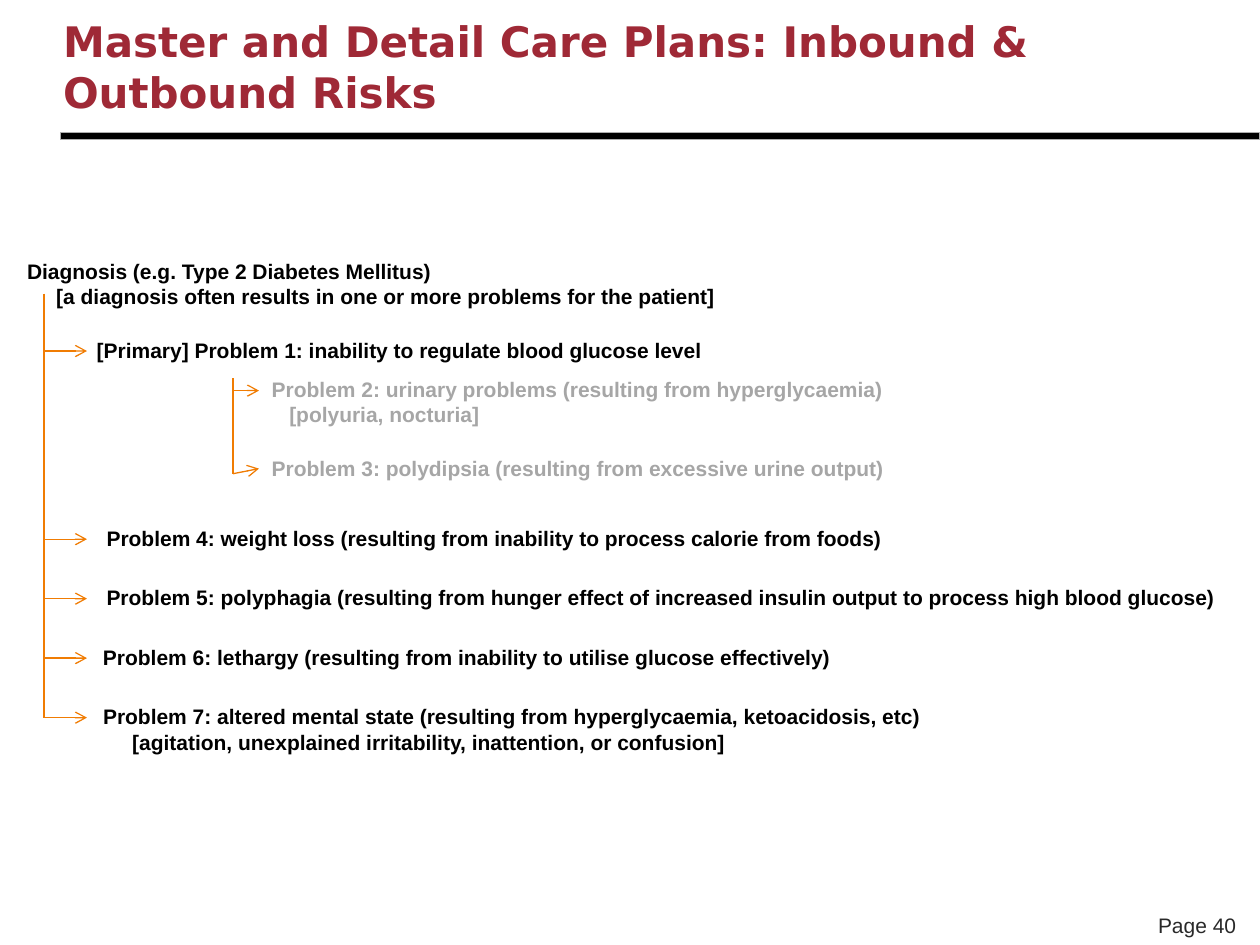
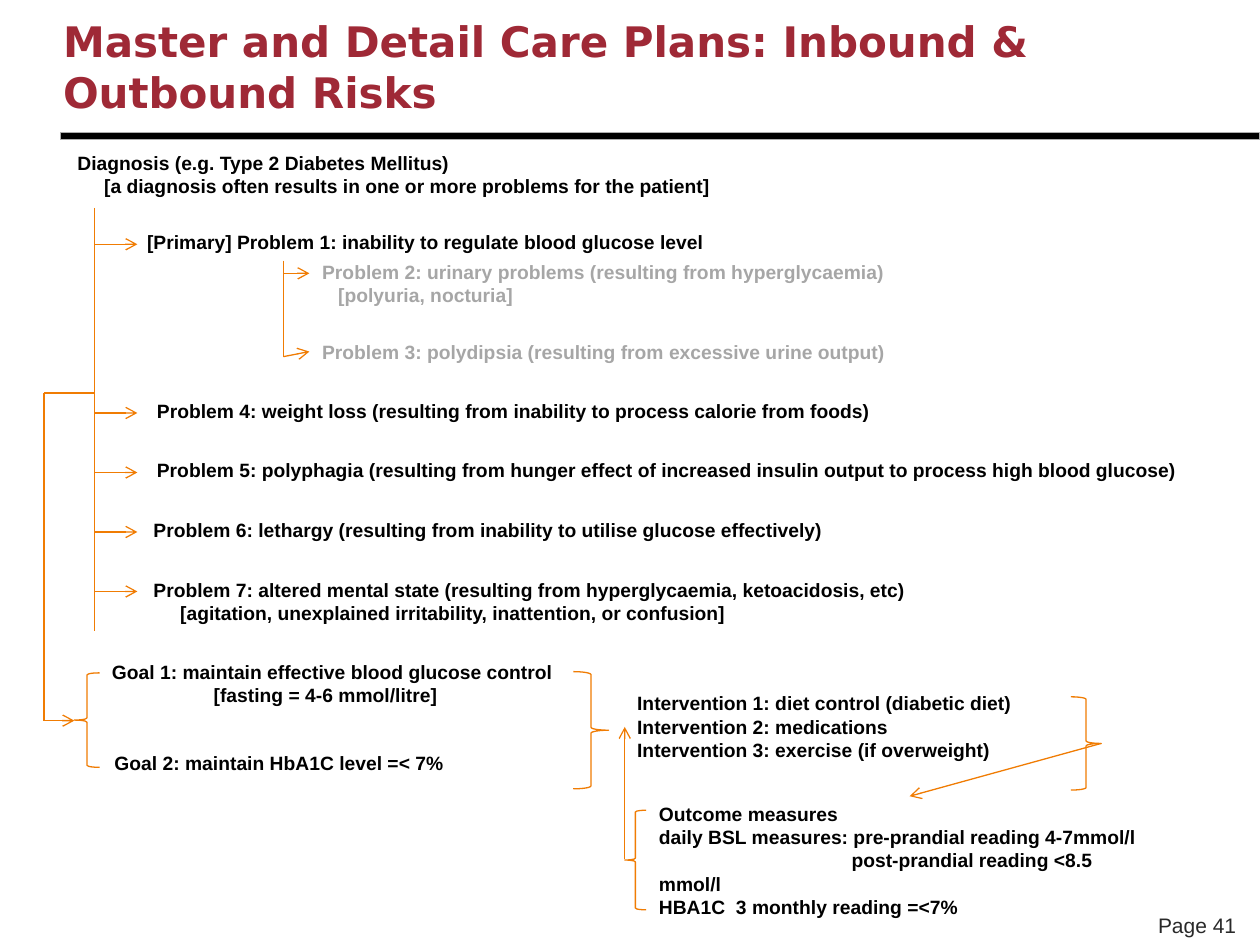
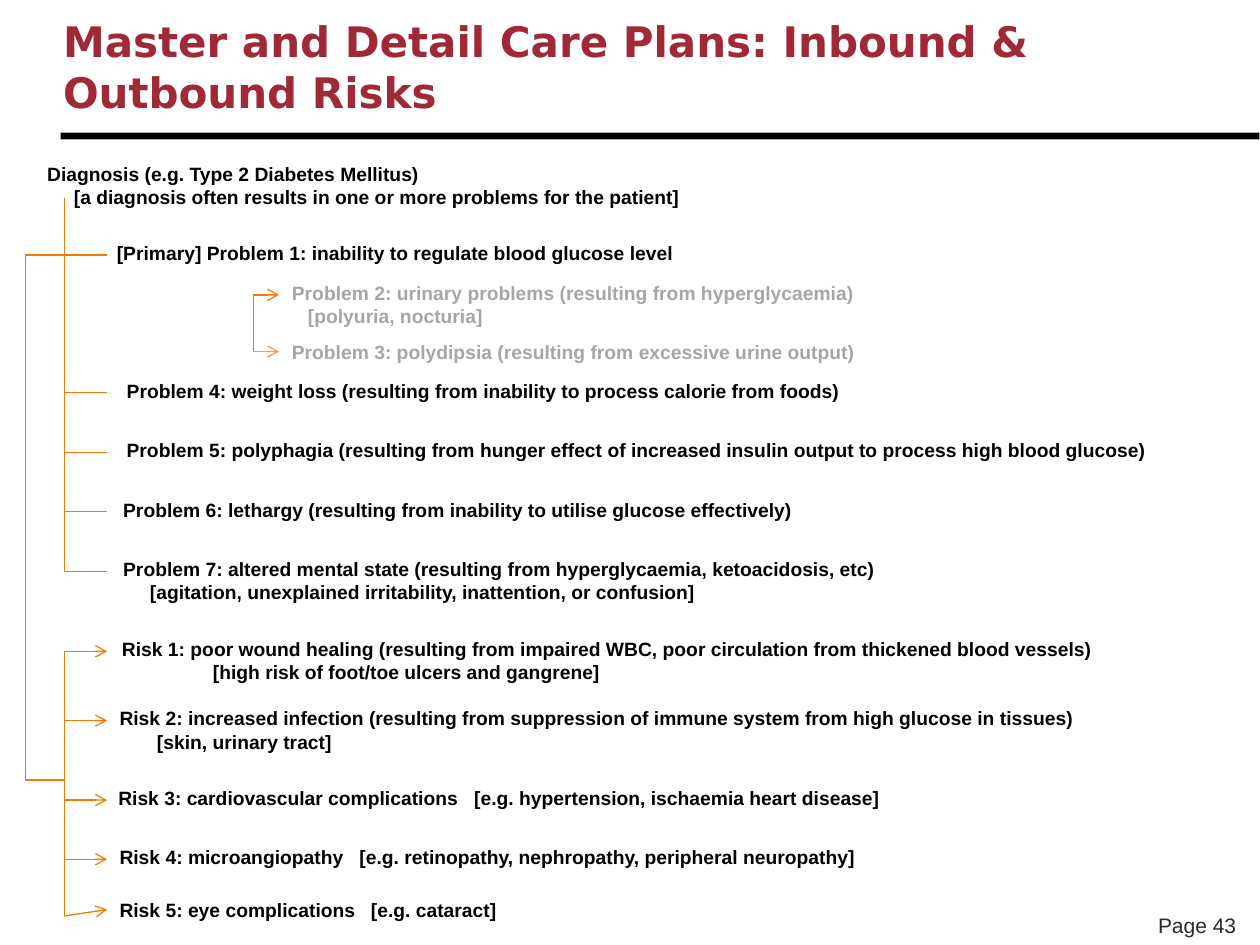
from lxml.etree import SubElement
from pptx import Presentation
from pptx.dml.color import RGBColor
from pptx.enum.shapes import MSO_CONNECTOR, MSO_SHAPE
from pptx.enum.text import MSO_ANCHOR, MSO_AUTO_SIZE, PP_ALIGN
from pptx.oxml.ns import qn
from pptx.util import Pt

COLORS = {
    "title": "9F2936", "text": "000000", "muted": "A6A6A6", "page": "292929",
    "line": "F07C03", "light_line": "F89F42", "band": "000000", "band_edge": "ADADAD",
}
TITLE = "Master and Detail Care Plans: Inbound & Outbound Risks"
SPACE_WIDTH = 0.278  # width of an Arial space, in ems

# Text lines are (text, first-line indent in spaces)
# Problem rows: left offset from the trunk, text width at 12 pt, lines
DIAGNOSIS = (-16.8, 400, [
    ("Diagnosis (e.g. Type 2 Diabetes Mellitus)", 0),
    ("[a diagnosis often results in one or more problems for the patient]", 5)])
MAIN_PROBLEMS = [
    (23, 352, [("[Primary] Problem 1: inability to regulate blood glucose level", 0)]),
    (28.6, 454, [("Problem 4: weight loss (resulting from inability to process calorie from foods)", 0)]),
    (28.6, 647, [("Problem 5: polyphagia (resulting from hunger effect of increased insulin output "
                  "to process high blood glucose)", 0)]),
    (26.6, 426, [("Problem 6: lethargy (resulting from inability to utilise glucose effectively)", 0)]),
    (26.6, 474, [
        ("Problem 7: altered mental state (resulting from hyperglycaemia, ketoacidosis, etc)", 0),
        ("[agitation, unexplained irritability, inattention, or confusion]", 5)]),
]
SUB_PROBLEMS = [
    (123, 355, [("Problem 2: urinary problems (resulting from hyperglycaemia)", 0),
                ("[polyuria, nocturia]", 3)]),
    (123, 359, [("Problem 3: polydipsia (resulting from excessive urine output)", 0)]),
]
ROW_STEP = 34
ARROW_DROP = 11.4   # from the top of a row to its arrow
BRANCH = 24.5       # length of a branch from the trunk
SUB_TRUNK = 108     # offset of the inner trunk from the main trunk
SUB_BRANCH = 14.8

# Tops of rows; sub_trunk is top and bottom, sub_arrows are (start, end) heights
PAGES = [
    dict(page=40, size=12, trunk=25.2, trunk_top=167.8, trunk_bottom=410.4, arrows=True,
         diagnosis=144, primary=189.2, fourth=296.7, subs=(211.7, 257),
         sub_trunk=(216, 270.7), sub_arrows=[(223.2, 223.2), (270.7, 267.8)], last_line="line"),
    dict(page=41, size=11, trunk=54, trunk_top=118.8, trunk_bottom=360.7, arrows=True,
         diagnosis=82.8, primary=128.2, fourth=224.6, subs=(145.4, 190.8),
         sub_trunk=(149, 203.8), sub_arrows=[(156.2, 156.2), (203.8, 200.9)], last_line="line"),
    dict(page=43, size=11, trunk=36.7, trunk_top=113, trunk_bottom=326.9, arrows=False,
         diagnosis=89.3, primary=134.4, fourth=213.1, subs=(157, 190.8),
         sub_trunk=(168.5, 200.9), sub_arrows=[(168.5, 168.5), (200.9, 200.9)],
         last_line="light_line"),
]


def add_label(slide, left, top, width, lines, size, color="text", tab=None):
    height = 7.2 + 1.2 * size * len(lines)
    box = slide.shapes.add_textbox(Pt(left), Pt(top), Pt(width), Pt(height))
    frame = box.text_frame
    frame.word_wrap = True
    for index, (text, spaces) in enumerate(lines):
        paragraph = frame.paragraphs[0] if index == 0 else frame.add_paragraph()
        paragraph.text = text
        paragraph.font.name = "Arial"
        paragraph.font.size = Pt(size)
        paragraph.font.bold = True
        paragraph.font.color.rgb = RGBColor.from_string(COLORS[color])
        properties = paragraph._p.get_or_add_pPr()
        if spaces:
            properties.set("marL", "0")
            properties.set("indent", str(Pt(spaces * SPACE_WIDTH * size)))
        if tab:
            tab_list = properties.makeelement(qn("a:tabLst"))
            SubElement(tab_list, qn("a:tab"), pos=str(Pt(tab)), algn="l")
            properties.insert(0, tab_list)


def add_line(slide, x1, y1, x2, y2, arrow=False, color="line"):
    connector = slide.shapes.add_connector(
        MSO_CONNECTOR.STRAIGHT, Pt(x1), Pt(y1), Pt(x2), Pt(y2))
    connector.line.color.rgb = RGBColor.from_string(COLORS[color])
    connector.line.width = Pt(0.75)
    properties = connector._element.spPr
    if arrow:
        SubElement(properties.find(qn("a:ln")), qn("a:tailEnd"), type="arrow")
    SubElement(properties, qn("a:effectLst"))


presentation = Presentation()
presentation.slide_width = Pt(720)
presentation.slide_height = Pt(540)
layout = presentation.slide_layouts[5]
slides = []

for page in PAGES:
    slide = presentation.slides.add_slide(layout)
    slides.append(slide)
    trunk, size = page["trunk"], page["size"]

    # Title
    title = slide.shapes.title
    title.left, title.top, title.width, title.height = Pt(36), Pt(9.4), Pt(658), Pt(56.9)
    frame = title.text_frame
    frame.margin_left = frame.margin_right = frame.margin_top = frame.margin_bottom = 0
    frame.vertical_anchor = MSO_ANCHOR.MIDDLE
    frame.auto_size = MSO_AUTO_SIZE.NONE
    frame.word_wrap = True
    paragraph = frame.paragraphs[0]
    paragraph.text = TITLE
    paragraph.alignment = PP_ALIGN.LEFT
    paragraph.font.name = "DejaVu Sans"
    paragraph.font.size = Pt(24)
    paragraph.font.bold = True
    paragraph.font.color.rgb = RGBColor.from_string(COLORS["title"])

    # Band under the title
    band = slide.shapes.add_shape(MSO_SHAPE.RECTANGLE, Pt(34.6), Pt(75.6), Pt(685.4), Pt(4.2))
    band.shadow.inherit = False
    band.fill.solid()
    band.fill.fore_color.rgb = RGBColor.from_string(COLORS["band"])
    band.line.color.rgb = RGBColor.from_string(COLORS["band_edge"])
    band.line.width = Pt(0.75)

    # Page number
    footer = slide.shapes.add_textbox(Pt(635), Pt(517.7), Pt(78.5), Pt(21.6))
    footer.text_frame.word_wrap = True
    footer.text_frame.vertical_anchor = MSO_ANCHOR.BOTTOM
    paragraph = footer.text_frame.paragraphs[0]
    paragraph.text = f"Page {page['page']}"
    paragraph.alignment = PP_ALIGN.RIGHT
    paragraph.font.name = "Arial"
    paragraph.font.size = Pt(12)
    paragraph.font.color.rgb = RGBColor.from_string(COLORS["page"])

    # Diagnosis and problems
    main_tops = [page["primary"]] + [page["fourth"] + ROW_STEP * i for i in range(4)]
    rows = [(DIAGNOSIS, page["diagnosis"], "text")]
    rows += [(problem, top, "text") for problem, top in zip(MAIN_PROBLEMS, main_tops)]
    rows += [(problem, top, "muted") for problem, top in zip(SUB_PROBLEMS, page["subs"])]
    for (offset, width, lines), top, color in rows:
        add_label(slide, trunk + offset, top, width * size / 12 + 15, lines, size, color)

    # Main trunk with its branches
    add_line(slide, trunk, page["trunk_top"], trunk, page["trunk_bottom"])
    for top in main_tops:
        y = top + ARROW_DROP
        add_line(slide, trunk, y, trunk + BRANCH, y, page["arrows"])

    # Inner trunk with its branches
    sub_x = trunk + SUB_TRUNK
    sub_top, sub_bottom = page["sub_trunk"]
    add_line(slide, sub_x, sub_top, sub_x, sub_bottom)
    for (start, end), color in zip(page["sub_arrows"], ("line", page["last_line"])):
        add_line(slide, sub_x, start, sub_x + SUB_BRANCH, end, True, color)

# Goals, interventions and outcomes
goal_slide, risk_slide = slides[1:]
for left, top, width, lines in [
    (56.9, 373.7, 273, [("Goal 1: maintain effective blood glucose control", 0),
                        ("[fasting = 4-6 mmol/litre]", 19)]),
    (58.3, 425.5, 206, [("Goal 2: maintain HbA1C level =< 7%", 0)]),
    (357, 391.7, 231, [("Intervention 1: diet control (diabetic diet)", 0),
                       ("Intervention 2: medications", 0),
                       ("Intervention 3: exercise (if overweight)", 0)]),
    (369.4, 455, 292, [("Outcome measures", 0),
                       ("daily BSL measures: pre-prandial reading 4-7mmol/l", 0),
                       ("post-prandial reading <8.5 mmol/l", 36),
                       ("HBA1C  3 monthly reading =<7%", 0)]),
]:
    add_label(goal_slide, left, top, width, lines, 11)

for kind, left, top, width, height in [
    (MSO_SHAPE.LEFT_BRACE, 42.5, 384.5, 14.4, 54),
    (MSO_SHAPE.RIGHT_BRACE, 327.6, 383.8, 20.2, 67),
    (MSO_SHAPE.LEFT_BRACE, 357, 463, 12.2, 56.9),
    (MSO_SHAPE.RIGHT_BRACE, 612, 398.2, 17.3, 53.3),
]:
    brace = goal_slide.shapes.add_shape(kind, Pt(left), Pt(top), Pt(width), Pt(height))
    brace.shadow.inherit = False
    brace.fill.background()
    brace.line.color.rgb = RGBColor.from_string(COLORS["line"])
    brace.line.width = Pt(0.75)

for x1, y1, x2, y2, arrow in [
    (25.2, 224.6, 25.2, 411.8, False),
    (25.2, 224.6, 54, 224.6, False),
    (25.2, 411.8, 42.5, 411.8, True),
    (357, 491, 357, 415.4, True),
    (629.3, 424.8, 519.8, 455, True),
]:
    add_line(goal_slide, x1, y1, x2, y2, arrow)

# Risks: left, top, width, start of the arrow, tab stop, lines
for left, top, width, start, tab, lines in [
    (62.6, 360.7, 575, 372.2, None, [
        ("Risk 1: poor wound healing (resulting from impaired WBC, "
         "poor circulation from thickened blood vessels)", 0),
        ("[high risk of foot/toe ulcers and gangrene]", 17)]),
    (61.2, 400.3, 566, 411.8, None, [
        ("Risk 2: increased infection (resulting from suppression of immune system "
         "from high glucose in tissues)", 0),
        ("[skin, urinary tract]", 7)]),
    (60.5, 445.7, 455, 457.2, 203.4, [
        ("Risk 3: cardiovascular complications\t[e.g. hypertension, ischaemia heart disease]", 0)]),
    (61.2, 479.5, 442, 491, 137.1, [
        ("Risk 4: microangiopathy\t[e.g. retinopathy, nephropathy, peripheral neuropathy]", 0)]),
    (61.2, 509.8, 234, 523.4, 143.7, [("Risk 5: eye complications\t[e.g. cataract]", 0)]),
]:
    add_label(risk_slide, left, top, width, lines, 11, tab=tab)
    end = 519.8 if top > 500 else start
    add_line(risk_slide, 36.7, start, 61.2, end, True)

# Risk trunk and its link to the primary problem
for x1, y1, x2, y2 in [
    (36.7, 372.2, 36.7, 523.4),
    (14.4, 145.8, 36.7, 145.8),
    (14.4, 145.8, 14.4, 445.7),
    (14.4, 445.7, 36.7, 445.7),
]:
    add_line(risk_slide, x1, y1, x2, y2)

presentation.save("out.pptx")
